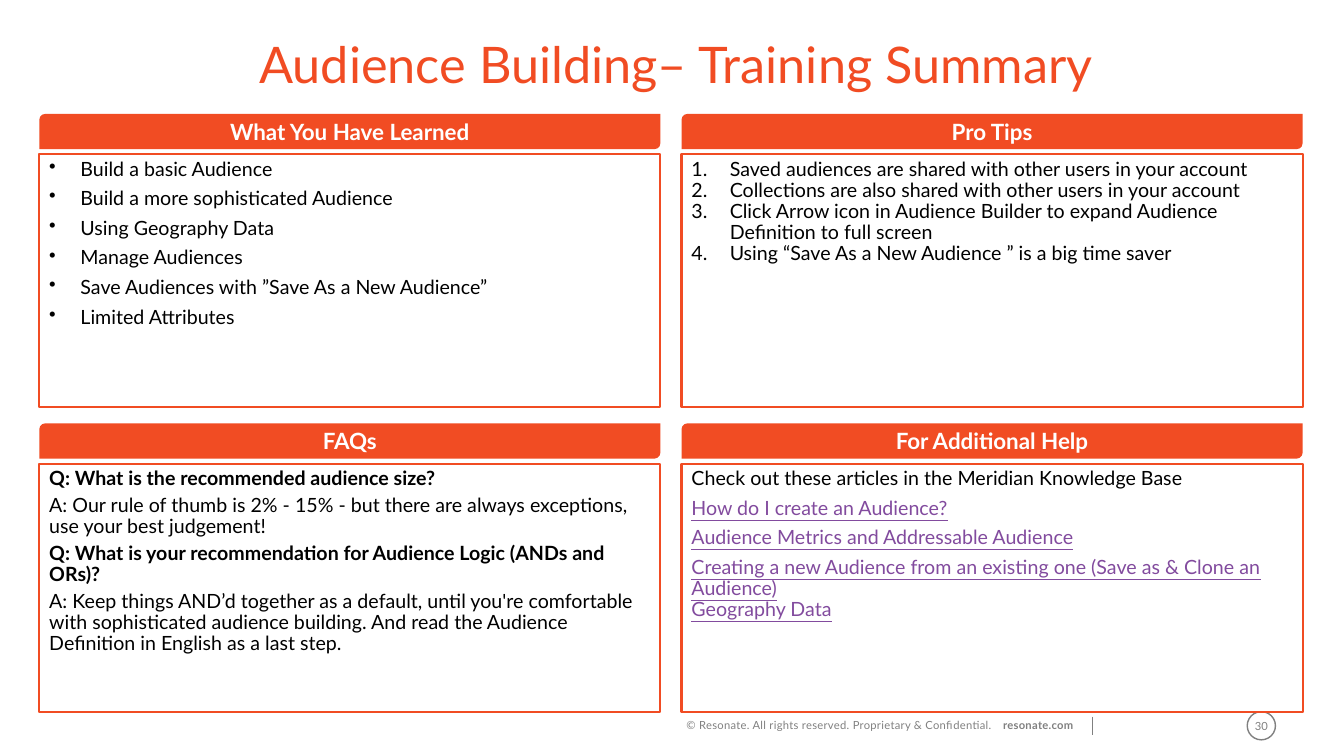
from pptx import Presentation
from pptx.dml.color import RGBColor
from pptx.enum.shapes import MSO_CONNECTOR as LINK, MSO_SHAPE as SHAPE
from pptx.enum.text import MSO_ANCHOR as ANCHOR, PP_ALIGN as ALIGN
from pptx.oxml.ns import qn
from pptx.util import Emu, Pt
from lxml.etree import SubElement

FONT = "Lato"
ORANGE, PURPLE, GREY = "F14C23", "824B9E", "808080"
BLACK, WHITE = "000000", "FFFFFF"
WIDE, HEAD = 616, 35
COLS = 39, 676
ROWS = (113, 251), (420, 246)

LEARNED = [
    "Build a basic Audience",
    "Build a more sophisticated Audience",
    "Using Geography Data",
    "Manage Audiences",
    "Save Audiences with ”Save As a New Audience”",
    "Limited Attributes",
]
TIPS = [
    "Saved audiences are shared with other users in your account",
    "Collections are also shared with other users in your account",
    "Click Arrow icon in Audience Builder to expand Audience Definition to full screen",
    "Using “Save As a New Audience ” is a big time saver",
]
FAQS = [
    "Q: What is the recommended audience size?",
    "A: Our rule of thumb is 2% - 15% - but there are always exceptions, "
    "use your best judgement!",
    "Q: What is your recommendation for Audience Logic (ANDs and ORs)?",
    "A: Keep things AND’d together as a default, until you're comfortable with "
    "sophisticated audience building. And read the Audience Definition in English "
    "as a last step.",
]
HELP = [
    "Check out these articles in the Meridian Knowledge Base",
    "How do I create an Audience?",
    "Audience Metrics and Addressable Audience",
    "Creating a new Audience from an existing one (Save as & Clone an Audience)",
    "Geography Data",
]


def px(num):
    """Turn px, 100 to the inch, into EMU."""
    return Emu(num * 9144)


def paint(form, code):
    """Give a fill or a font a solid hex colour."""
    if hasattr(form, "solid"):
        form.solid()
        form.fore_color.rgb = RGBColor.from_string(code)
    else:
        form.color.rgb = RGBColor.from_string(code)


def style(run, size, code, bold=False):
    run.font.name = FONT
    run.font.size = Pt(size)
    run.font.bold = bold
    paint(run.font, code)


def add_shape(slide, kind, box, fill=None, line=None, width=1):
    shape = slide.shapes.add_shape(kind, *map(px, box))
    shape.shadow.inherit = False
    if fill:
        paint(shape.fill, fill)
    else:
        shape.fill.background()
    if line:
        paint(shape.line.fill, line)
        shape.line.width = Pt(width)
    else:
        shape.line.fill.background()
    return shape


def add_label(shape, text, size, code, bold=False):
    """Centre one line of text in a shape."""
    frame = shape.text_frame
    frame.text = text
    frame.vertical_anchor = ANCHOR.MIDDLE
    para = frame.paragraphs[0]
    para.alignment = ALIGN.CENTER
    style(para.runs[0], size, code, bold)
    return para


def add_mark(para, tag, indent, **attrs):
    """Hang a bullet or a number before a paragraph."""
    props = para._p.get_or_add_pPr()
    props.set("marL", str(px(indent)))
    props.set("indent", str(px(-indent)))
    SubElement(props, qn(tag), **attrs)


def add_panel(slide, col, row, title, lines):
    """Draw a header bar over a framed box and return the box's paragraphs."""
    left, (top, tall) = COLS[col], ROWS[row]
    body = add_shape(slide, SHAPE.RECTANGLE, (left, top + 40, WIDE, tall),
                     WHITE, ORANGE, 1.5)
    frame = body.text_frame
    frame.text = "\n".join(lines)
    frame.vertical_anchor = ANCHOR.TOP
    for para in frame.paragraphs:
        para.alignment = ALIGN.LEFT
        para.line_spacing = 0.9
        style(para.runs[0], 14, BLACK)
    bar = add_shape(slide, SHAPE.ROUND_2_DIAG_RECTANGLE,
                    (left, top, WIDE, HEAD), ORANGE)
    add_label(bar, title, 16, WHITE, True)
    return frame.paragraphs


def add_title(slide, text):
    box = slide.shapes.add_textbox(*map(px, (76, 32, 1189, 69)))
    frame = box.text_frame
    frame.word_wrap = True
    frame.margin_left = frame.margin_right = px(40)
    add_label(box, text, 36, ORANGE).line_spacing = 0.9


def add_footer(slide):
    disc = add_shape(slide, SHAPE.OVAL, (1237, 706, 28, 28), line=GREY)
    disc.text_frame.word_wrap = False
    add_label(disc, "30", 8, GREY)

    box = slide.shapes.add_textbox(*map(px, (671, 708, 407, 24)))
    box.text_frame.word_wrap = True
    para = box.text_frame.paragraphs[0]
    tabs = SubElement(para._p.get_or_add_pPr(), qn("a:tabLst"))
    SubElement(tabs, qn("a:tab"), pos=str(px(314)), algn="l")
    para.text = "© Resonate. All rights reserved. Proprietary & Confidential.\t"
    para.add_run().text = "resonate.com"
    for run, bold in zip(para.runs, (False, True)):
        style(run, 8, GREY, bold)
        run.font._element.set("spc", "20")

    rule = slide.shapes.add_connector(LINK.STRAIGHT, *map(px, (1083, 711, 1083, 729)))
    paint(rule.line.fill, GREY)
    rule.line.width = Pt(0.5)
    SubElement(rule._element.spPr, qn("a:effectLst"))


def main():
    deck = Presentation()
    deck.slide_width, deck.slide_height = px(1333), px(750)
    slide = deck.slides.add_slide(deck.slide_layouts[6])
    add_footer(slide)
    add_title(slide, "Audience Building– Training Summary")

    for para in add_panel(slide, 0, 0, "What You Have Learned", LEARNED):
        add_mark(para, "a:buChar", 31, char="•")
        para.space_after = Pt(6)
    for para in add_panel(slide, 1, 0, "Pro Tips", TIPS):
        add_mark(para, "a:buAutoNum", 38, type="arabicPeriod")
    for para in add_panel(slide, 0, 1, "FAQs", FAQS):
        para.space_after = Pt(4)
        para.runs[0].font.bold = para.text.startswith("Q:")

    notes = add_panel(slide, 1, 1, "For Additional Help", HELP)
    for para in notes[:3]:
        para.space_after = Pt(6)
    for para in notes[1:]:
        font = para.runs[0].font
        font.underline = True
        paint(font, PURPLE)
    deck.save("out.pptx")


if __name__ == "__main__":
    main()
